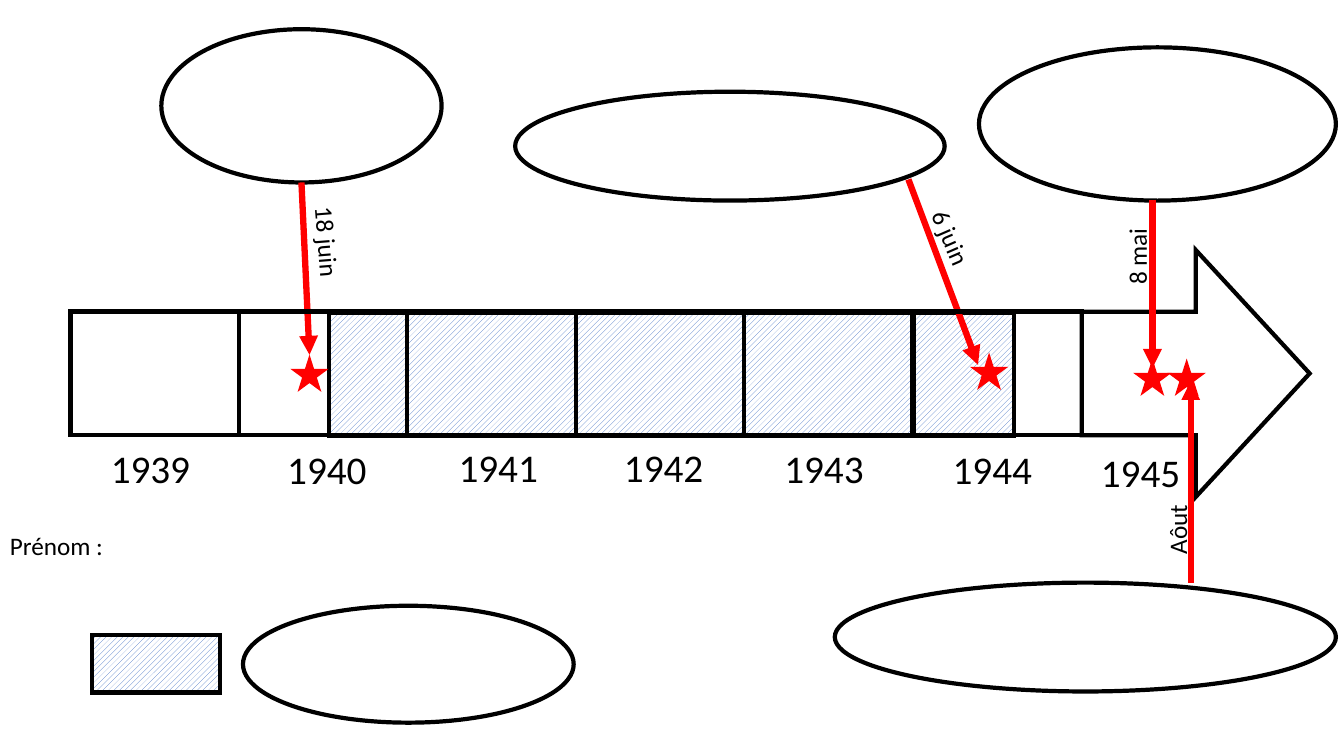
from dataclasses import dataclass
from typing import NamedTuple

from pptx import Presentation, util as u
from pptx.dml.color import RGBColor
from pptx.enum import dml, shapes, text
from pptx.oxml import ns, xmlchemy

PX = 9144


@dataclass(frozen=True)
class Theme:
    ink: RGBColor = RGBColor(0, 0, 0)
    paper: RGBColor = RGBColor(255, 255, 255)
    event: RGBColor = RGBColor(255, 0, 0)
    hatch: RGBColor = RGBColor(0x44, 0x72, 0xC4)
    font: str = "Calibri"
    year_size: int = 28
    label_size: int = 18
    outline: float = 3
    star_outline: float = 1
    arrow_line: float = 4.5


class Box(NamedTuple):
    left: int
    top: int
    width: int
    height: int


class Year(NamedTuple):
    name: str
    left: int
    top: int


class Event(NamedTuple):
    date: str
    label: Box
    rotation: float
    start: tuple[int, int]
    end: tuple[int, int]
    star: tuple[int, int]


THEME = Theme()
KIND = shapes.MSO_SHAPE

OCCUPATION = Box(326, 310, 680, 122)
LEGEND = Box(91, 630, 127, 57)
TIMELINE_HEAD = Box(1073, 248, 226, 245)
BUBBLES = [
    Box(160, 29, 278, 152),
    Box(511, 91, 426, 108),
    Box(971, 47, 354, 152),
    Box(828, 578, 497, 108),
    Box(241, 601, 328, 116),
]
YEARS = [
    Year("1939", 100, 436),
    Year("1940", 275, 437),
    Year("1941", 445, 435),
    Year("1942", 609, 435),
    Year("1943", 768, 436),
    Year("1944", 935, 437),
    Year("1945", 1082, 440),
]
EVENTS = [
    Event("18 juin", Box(252, 251, 151, 40), 85.4, (299, 181), (307, 352), (290, 354)),
    Event("6 juin", Box(883, 250, 151, 40), 66.5, (901, 178), (970, 362), (964, 352)),
    Event("8 mai", Box(1052, 197, 151, 40), 270, (1143, 198), (1143, 365), (1126, 358)),
    Event("Aôut", Box(1092, 464, 151, 40), 270, (1181, 578), (1181, 378), (1160, 358)),
]


def emu(*lengths: int) -> list[int]:
    return [length * PX for length in lengths]


def add_part(slide, kind, box: Box, *, fill: RGBColor | None = THEME.paper,
             hatched: bool = False, line: RGBColor = THEME.ink,
             weight: float = THEME.outline) -> None:
    part = slide.shapes.add_shape(kind, *emu(*box))
    part.shadow.inherit = False
    if hatched:
        part.fill.patterned()
        part.fill.pattern = dml.MSO_PATTERN.WIDE_UPWARD_DIAGONAL
        part.fill.fore_color.rgb = THEME.hatch
        part.fill.back_color.rgb = THEME.paper
    elif fill is None:
        part.fill.background()
    else:
        part.fill.solid()
        part.fill.fore_color.rgb = fill
    part.line.color.rgb = line
    part.line.width = u.Pt(weight)
    miter = xmlchemy.OxmlElement("a:miter")
    miter.set("lim", "800000")
    part.line._get_or_add_ln().append(miter)


def add_arrow(slide, start: tuple[int, int], end: tuple[int, int]) -> None:
    arrow = slide.shapes.add_connector(shapes.MSO_CONNECTOR.STRAIGHT, *emu(*start, *end))
    arrow.line.color.rgb = THEME.event
    arrow.line.width = u.Pt(THEME.arrow_line)
    tip = xmlchemy.OxmlElement("a:tailEnd")
    tip.set("type", "triangle")
    arrow.line._get_or_add_ln().append(tip)
    properties = arrow._element.find(ns.qn("p:spPr"))
    properties.append(xmlchemy.OxmlElement("a:effectLst"))


def add_text(slide, words: str, box: Box, *, size: int = THEME.label_size,
             rotation: float = 0) -> None:
    label = slide.shapes.add_textbox(*emu(*box))
    label.rotation = rotation
    frame = label.text_frame
    frame.word_wrap = True
    frame.auto_size = text.MSO_AUTO_SIZE.SHAPE_TO_FIT_TEXT
    frame.text = words
    font = frame.paragraphs[0].runs[0].font
    font.name = THEME.font
    font.size = u.Pt(size)
    font.color.rgb = THEME.ink


def build() -> None:
    deck = Presentation()
    deck.slide_width, deck.slide_height = emu(1333, 750)
    slide = deck.slides.add_slide(deck.slide_layouts[6])

    add_part(slide, KIND.RECTANGLE, OCCUPATION, hatched=True)
    add_part(slide, KIND.RIGHT_ARROW, TIMELINE_HEAD)
    for bubble in BUBBLES:
        add_part(slide, KIND.OVAL, bubble)
    add_part(slide, KIND.RECTANGLE, LEGEND, hatched=True)
    for event in EVENTS:
        add_arrow(slide, event.start, event.end)
    for index in range(6):
        cell = Box(70 + 836 * index // 5, 309, 167, 123)
        add_part(slide, KIND.RECTANGLE, cell, fill=None)
    for year in YEARS:
        add_text(slide, year.name, Box(year.left, year.top, 108, 57), size=THEME.year_size)
    for event in EVENTS:
        add_part(slide, KIND.STAR_5_POINT, Box(*event.star, 34, 33), fill=THEME.event,
                 line=THEME.event, weight=THEME.star_outline)
        add_text(slide, event.date, event.label, rotation=event.rotation)
    add_text(slide, "Prénom :", Box(0, 521, 192, 40))

    deck.save("out.pptx")


if __name__ == "__main__":
    build()
